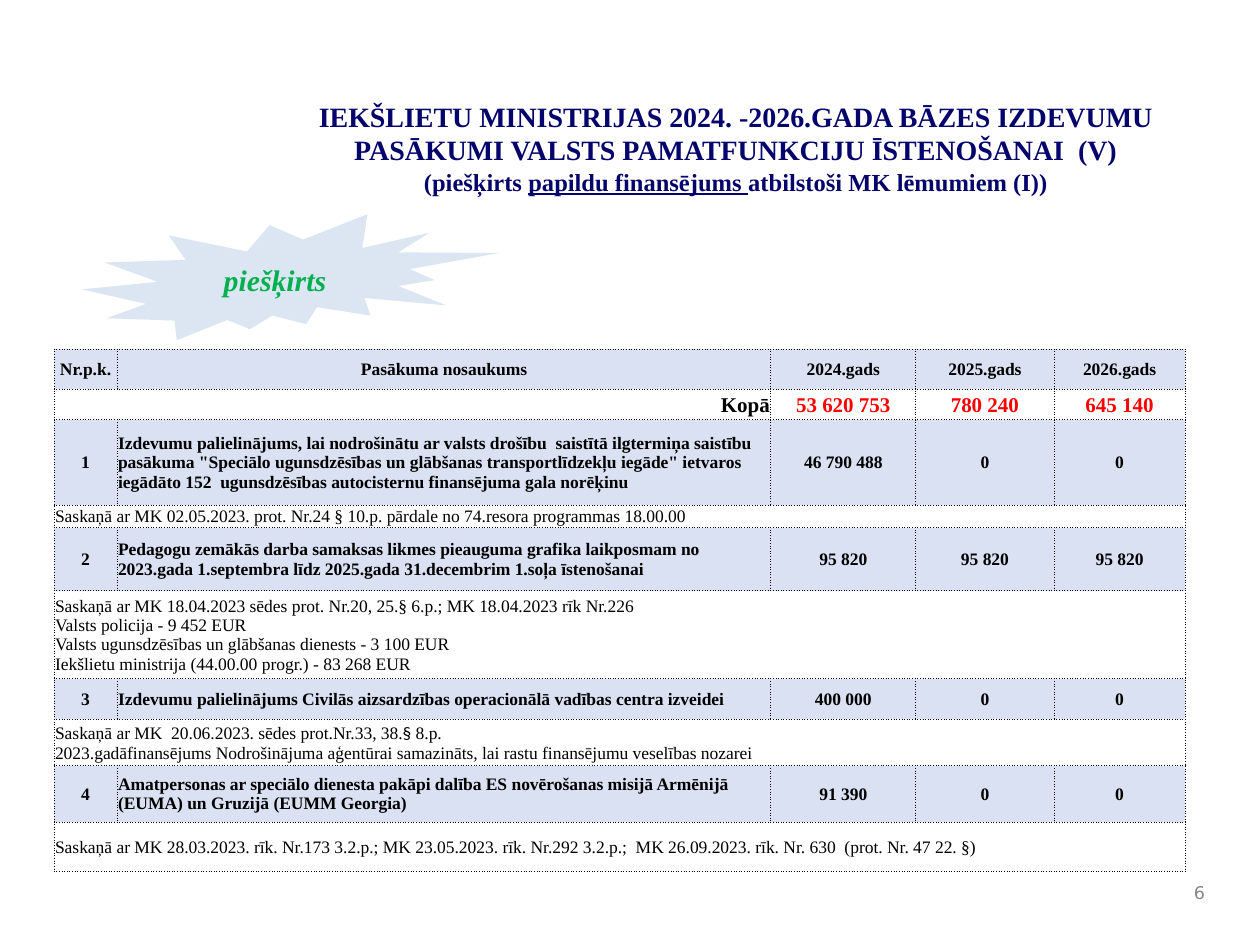
import pptx
import pptx.util
import pptx.dml.color
import pptx.enum.shapes
import pptx.enum.text
import pptx.oxml
import pptx.oxml.ns

Cm = pptx.util.Cm
ALIGN = pptx.enum.text.PP_ALIGN
MIDDLE = pptx.enum.text.MSO_ANCHOR.MIDDLE
SERIF = "Times New Roman"
COLORS = {
    "title": "04046C", "text": "000000", "total": "FF0000", "band": "D9E1F2",
    "burst": "DCE6F2", "granted": "00B050", "number": "898989",
}

TITLE = [
    [("IEKŠLIETU MINISTRIJAS 2024. -2026.GADA BĀZES IZDEVUMU PASĀKUMI "
      "VALSTS PAMATFUNKCIJU ĪSTENOŠANAI  (V)", 16, False)],
    [("(piešķirts ", 14, False), ("papildu finansējums ", 14, True),
     ("atbilstoši MK lēmumiem (I))", 14, False)],
]
HEADER = ["Nr.p.k.", "Pasākuma nosaukums", "2024.gads", "2025.gads", "2026.gads"]
TOTALS = ["53 620 753", "780 240", "645 140"]
MEASURES = [
    (["1", "Izdevumu palielinājums, lai nodrošinātu ar valsts drošību  saistītā ilgtermiņa "
      "saistību pasākuma \"Speciālo ugunsdzēsības un glābšanas transportlīdzekļu iegāde\" "
      "ietvaros iegādāto 152  ugunsdzēsības autocisternu finansējuma gala norēķinu",
      "46 790 488", "0", "0"],
     [("Saskaņā ar MK 02.05.2023. prot. Nr.24 § 10.p. pārdale no 74.resora programmas 18.00.00",
       SERIF)]),
    (["2", "Pedagogu zemākās darba samaksas likmes pieauguma grafika laikposmam no "
      "2023.gada 1.septembra līdz 2025.gada 31.decembrim 1.soļa īstenošanai",
      "95 820", "95 820", "95 820"],
     [("Saskaņā ar MK 18.04.2023 sēdes prot. Nr.20, 25.§ 6.p.; MK 18.04.2023 rīk Nr.226\n"
       "Valsts policija - 9 452 EUR\n"
       "Valsts ugunsdzēsības un glābšanas dienests - 3 100 EUR\n"
       "Iekšlietu ministrija (44.00.00 progr.) - 83 268 EUR", SERIF)]),
    (["3", "Izdevumu palielinājums Civilās aizsardzības operacionālā vadības centra izveidei",
      "400 000", "0", "0"],
     [("Saskaņā ar MK  20.06.2023. sēdes prot.Nr.33, 38.", SERIF), ("§", "Calibri"),
      (" 8.p.\n2023.gadāfinansējums Nodrošinājuma aģentūrai samazināts, "
       "lai rastu finansējumu veselības nozarei", SERIF)]),
    (["4", "Amatpersonas ar speciālo dienesta pakāpi dalība ES novērošanas misijā Armēnijā "
      "(EUMA) un Gruzijā (EUMM Georgia)", "91 390", "0", "0"],
     [("Saskaņā ar MK 28.03.2023. rīk. Nr.173 3.2.p.; MK 23.05.2023. rīk. Nr.292 3.2.p.;  "
       "MK 26.09.2023. rīk. Nr. 630  (prot. Nr. 47 22. §)", SERIF)]),
]
COL_WIDTHS = [1.27, 13.18, 2.92, 2.79, 2.64]
ROW_HEIGHTS = [0.81, 0.61, 1.73, 0.43, 1.27, 1.78, 0.81, 0.94, 1.14, 0.99]


def rgb(name):
    return pptx.dml.color.RGBColor.from_string(COLORS[name])


def add_run(p, text, size, color, font=SERIF, bold=False, italic=False, underline=False):
    for i, line in enumerate(text.split("\n")):
        if i:
            p.add_line_break()
        r = p.add_run()
        r.text = line
        r.font.name = font
        r.font.size = pptx.util.Pt(size)
        r.font.bold = bold
        r.font.italic = italic
        r.font.underline = underline
        r.font.color.rgb = rgb(color)


def add_text_box(s, left, top, width, height):
    tf = s.shapes.add_textbox(Cm(left), Cm(top), Cm(width), Cm(height)).text_frame
    tf.word_wrap = True
    return tf


def style_cell(cell, filled):
    cell.vertical_anchor = MIDDLE
    cell.margin_left = cell.margin_right = cell.margin_top = Cm(0.02)
    cell.margin_bottom = 0
    tc_pr = cell._tc.get_or_add_tcPr()
    for side in ("lnL", "lnR", "lnT", "lnB"):
        tc_pr.append(pptx.oxml.parse_xml(
            f'<a:{side} {pptx.oxml.ns.nsdecls("a")} w="6350"><a:solidFill>'
            f'<a:srgbClr val="{COLORS["text"]}"/></a:solidFill>'
            f'<a:prstDash val="sysDot"/></a:{side}>'))
    if filled:
        cell.fill.solid()
        cell.fill.fore_color.rgb = rgb("band")
    else:
        cell.fill.background()


def write_cell(cell, runs, align, size=10, color="text", bold=True):
    p = cell.text_frame.paragraphs[0]
    p.alignment = align
    for text, font in runs:
        add_run(p, text, size, color, font, bold)


def add_budget_table(s):
    table = s.shapes.add_table(
        len(ROW_HEIGHTS), len(COL_WIDTHS), Cm(1.09), Cm(7.04),
        Cm(sum(COL_WIDTHS)), Cm(sum(ROW_HEIGHTS))).table
    table.first_row = table.horz_banding = False
    for col, width in zip(table.columns, COL_WIDTHS):
        col.width = Cm(width)
    for i, (row, height) in enumerate(zip(table.rows, ROW_HEIGHTS)):
        row.height = Cm(height)
        for cell in row.cells:
            style_cell(cell, i % 2 == 0)

    for i, values in enumerate([HEADER] + [m[0] for m in MEASURES]):
        for j, value in enumerate(values):
            align = ALIGN.LEFT if i and j == 1 else ALIGN.CENTER
            write_cell(table.cell(2 * i, j), [(value, SERIF)], align)

    table.cell(1, 0).merge(table.cell(1, 1))
    write_cell(table.cell(1, 0), [("Kopā", SERIF)], ALIGN.RIGHT, 12)
    for j, total in enumerate(TOTALS, 2):
        write_cell(table.cell(1, j), [(total, SERIF)], ALIGN.CENTER, 12, "total")

    for i, (_, note) in enumerate(MEASURES):
        cell = table.cell(2 * i + 3, 0)
        cell.merge(table.cell(2 * i + 3, len(COL_WIDTHS) - 1))
        write_cell(cell, note, ALIGN.LEFT, bold=False)


def main():
    prs = pptx.Presentation()
    prs.slide_width, prs.slide_height = Cm(25.4), Cm(19.05)
    s = prs.slides.add_slide(prs.slide_layouts[6])

    tf = add_text_box(s, 4.75, 1.88, 20.17, 2.36)
    for i, runs in enumerate(TITLE):
        p = tf.add_paragraph() if i else tf.paragraphs[0]
        p.alignment = ALIGN.CENTER
        for text, size, underline in runs:
            add_run(p, text, size, "title", bold=True, underline=underline)

    tf = add_text_box(s, 23.7, 17.58, 0.84, 0.84)
    tf.vertical_anchor = MIDDLE
    tf.paragraphs[0].alignment = ALIGN.RIGHT
    add_run(tf.paragraphs[0], "6", 10, "number", "DejaVu Sans")

    add_budget_table(s)

    sp = s.shapes.add_shape(pptx.enum.shapes.MSO_SHAPE.EXPLOSION2,
                            Cm(1.65), Cm(4.32), Cm(8.41), Cm(2.54))
    sp.shadow.inherit = False
    sp.fill.solid()
    sp.fill.fore_color.rgb = rgb("burst")
    sp.line.fill.background()
    tf = sp.text_frame
    tf.word_wrap = True
    tf.vertical_anchor = MIDDLE
    tf.paragraphs[0].alignment = ALIGN.CENTER
    add_run(tf.paragraphs[0], "piešķirts", 17, "granted", bold=True, italic=True)

    prs.save("out.pptx")


if __name__ == "__main__":
    main()
